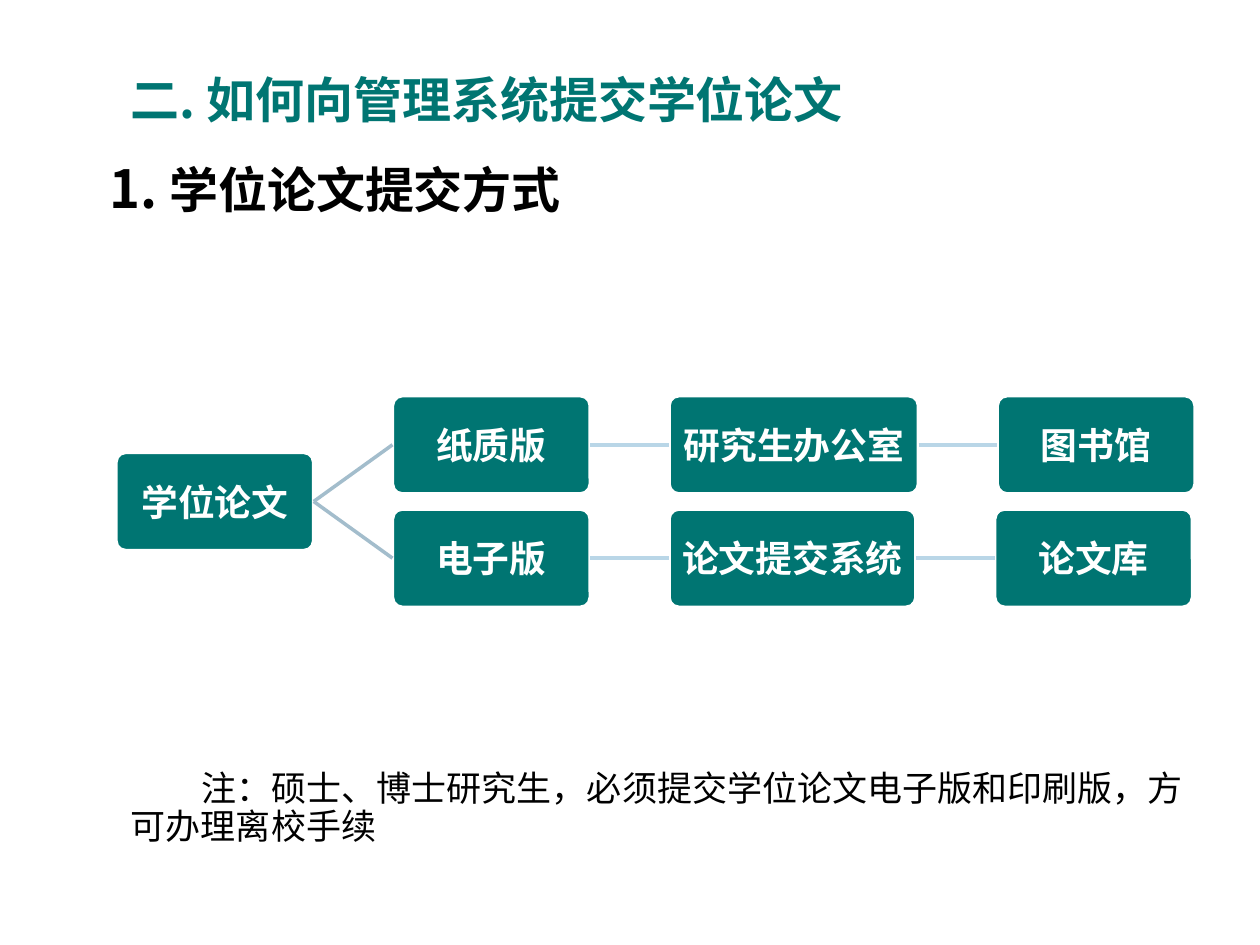
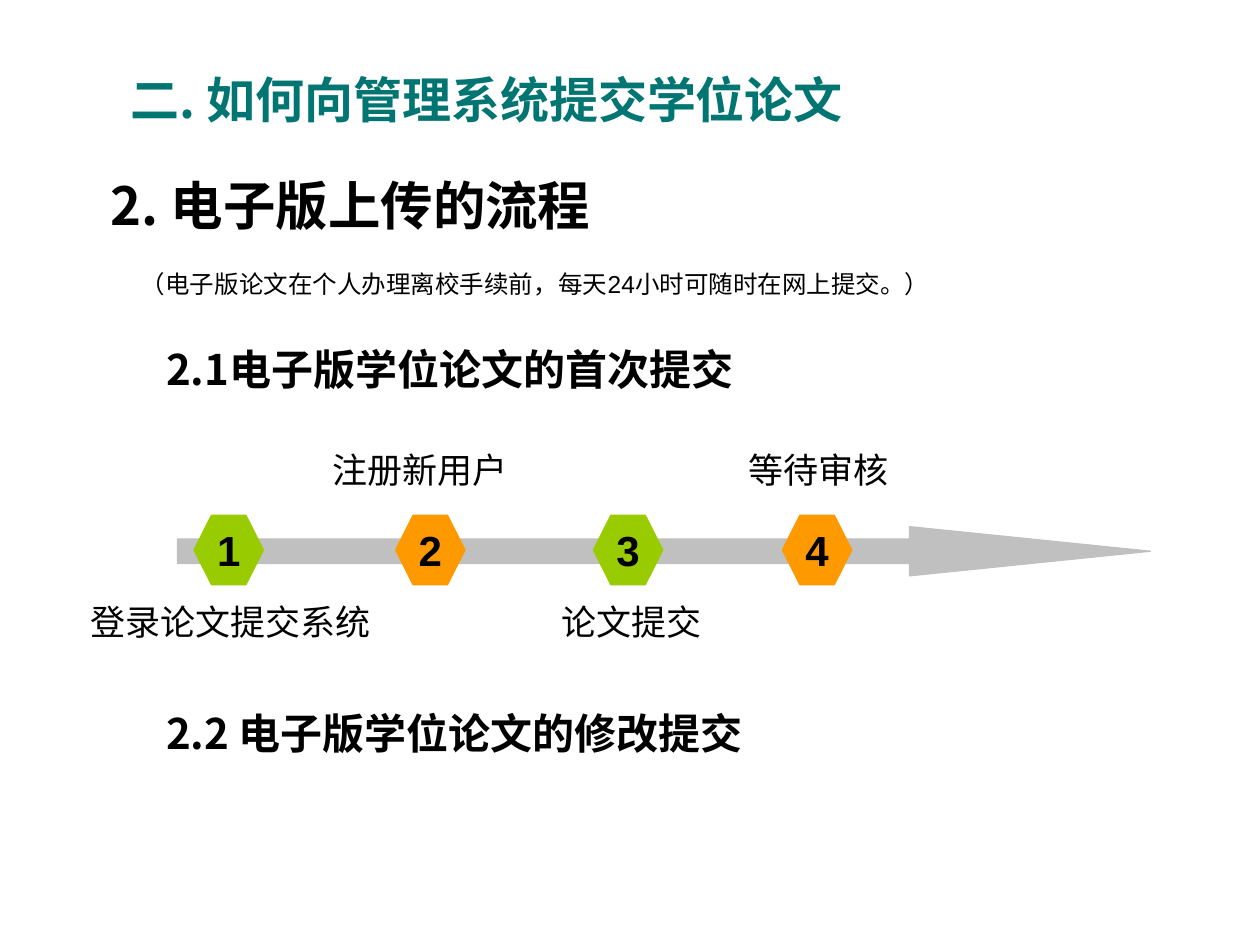
from lxml import etree
from pptx import Presentation
from pptx.dml.color import RGBColor
from pptx.enum.shapes import MSO_CONNECTOR, MSO_SHAPE
from pptx.enum.text import MSO_ANCHOR, PP_ALIGN
from pptx.oxml.ns import qn
from pptx.util import Inches, Pt

SLIDE_W, SLIDE_H = Inches(10), Inches(7.5)
UNIT = SLIDE_W // 10

TEAL = RGBColor(0x00, 0x75, 0x72)
WHITE = RGBColor(0xFF, 0xFF, 0xFF)
BLACK = RGBColor(0x00, 0x00, 0x00)
BRANCH = RGBColor(0xA3, 0xBD, 0xCC)
LINK = RGBColor(0xB9, 0xD6, 0xE7)
GRAY = RGBColor(0xC0, 0xC0, 0xC0)
GREEN = RGBColor(0x99, 0xCC, 0x00)
ORANGE = RGBColor(0xFF, 0x99, 0x00)

LATIN, CJK = "Arial", "Noto Sans CJK SC"
TOP, MIDDLE, BOTTOM = MSO_ANCHOR.TOP, MSO_ANCHOR.MIDDLE, MSO_ANCHOR.BOTTOM
CENTER = PP_ALIGN.CENTER
ROUNDED, HEXAGON, ARROW = MSO_SHAPE.ROUNDED_RECTANGLE, MSO_SHAPE.HEXAGON, MSO_SHAPE.RIGHT_ARROW
STRAIGHT = MSO_CONNECTOR.STRAIGHT
LEFT_SITE, RIGHT_SITE = 1, 3

NODE_W, NODE_H, NODE_GAP = 1.57, 0.78, 0.625
ROOT_LEFT, ROOT_TOP = 0.92, 3.59
HEX_TOP, HEX_SIZE = 4.09, 0.55
LABEL_ABOVE, LABEL_BELOW, LABEL_H = 3.51, 4.71, 0.44

ROUTES = [
    (3.14, 1.98, ["纸质版", "研究生办公室", "图书馆"]),
    (4.04, 1.96, ["电子版", "论文提交系统", "论文库"]),
]
STEPS = [
    (1.54, GREEN, "登录论文提交系统", 0.62, LABEL_BELOW, 2.6),
    (3.14, ORANGE, "注册新用户", 2.54, LABEL_ABOVE, 1.59),
    (4.71, GREEN, "论文提交", 4.36, LABEL_BELOW, 1.31),
    (6.21, ORANGE, "等待审核", 5.84, LABEL_ABOVE, 1.31),
]


def grid(*lengths):
    return [int(UNIT * n) for n in lengths]


def add_run(p, text, size, color=BLACK, font=LATIN, bold=False):
    r = p.add_run()
    r.text = text
    r.font.size = Pt(size)
    r.font.bold = bold
    r.font.color.rgb = color
    r.font.name = font
    etree.SubElement(r.font._element, qn("a:ea")).set("typeface", CJK)


def add_text(s, box, runs, anchor=MIDDLE, indent=0, first_indent=0, wrap=True):
    tf = s.shapes.add_textbox(*grid(*box)).text_frame
    tf.word_wrap = wrap
    tf.vertical_anchor = anchor
    p = tf.paragraphs[0]
    pPr = p._p.get_or_add_pPr()
    pPr.set("marL", str(grid(indent)[0]))
    pPr.set("indent", str(grid(first_indent)[0]))
    for run in runs:
        add_run(p, *run)
    return p


def add_title(s):
    add_text(s, (0.94, 0.16, 8.34, 1.25),
             [("二. 如何向管理系统提交学位论文", 28, TEAL, CJK, True)])


def add_heading(s, box, number, text, text_size):
    add_text(s, box, [(number, 30, BLACK, CJK, True),
                      (text, text_size, BLACK, CJK, True)], indent=0.27)


def add_subheading(s, top, text):
    add_text(s, (1.13, top, 8.74, 0.61), [(text, 24, BLACK, CJK, True)], indent=0.09)


def add_shape(s, kind, box, adjustments, fill, line, line_width):
    sp = s.shapes.add_shape(kind, *grid(*box))
    sp.shadow.inherit = False
    for i, value in enumerate(adjustments):
        sp.adjustments[i] = value
    sp.fill.solid()
    sp.fill.fore_color.rgb = fill
    sp.line.color.rgb = line
    sp.line.width = Pt(line_width)
    return sp


def fill_text(sp, text, size, color, inset):
    tf = sp.text_frame
    tf.word_wrap = False
    tf.vertical_anchor = MIDDLE
    tf.margin_left = tf.margin_right = tf.margin_top = tf.margin_bottom = Inches(inset)
    p = tf.paragraphs[0]
    p.alignment = CENTER
    add_run(p, text, size, color, LATIN, True)


def add_node(s, left, top, width, text):
    sp = add_shape(s, ROUNDED, (left, top, width, NODE_H), [0.1], TEAL, WHITE, 2)
    fill_text(sp, text, 21, WHITE, 0.01)
    return sp


def link_nodes(s, start, end, color):
    cxn = s.shapes.add_connector(STRAIGHT, 0, 0, 0, 0)
    cxn.begin_connect(start, RIGHT_SITE)
    cxn.end_connect(end, LEFT_SITE)
    cxn.line.color.rgb = color
    cxn.line.width = Pt(2)
    etree.SubElement(cxn._element.spPr, qn("a:effectLst"))


def add_route(s, root, top, office_width, names):
    previous, color = root, BRANCH
    left = ROOT_LEFT + NODE_W + NODE_GAP
    for name, width in zip(names, (NODE_W, office_width, NODE_W)):
        node = add_node(s, left, top, width, name)
        link_nodes(s, previous, node, color)
        previous, color = node, LINK
        left += width + NODE_GAP


def add_step(s, number, left, color, text, label_left, label_top, label_width):
    sp = add_shape(s, HEXAGON, (left, HEX_TOP, HEX_SIZE, HEX_SIZE), [0.251], color, color, 0.75)
    fill_text(sp, str(number), 24, BLACK, 0)
    add_text(s, (label_left, label_top, label_width, LABEL_H), [(text, 20)], wrap=False)


def build_submission_routes(s):
    add_title(s)
    add_heading(s, (0.5, 0.86, 9, 1.25), "1. ", "学位论文提交方式", 28)
    root = add_node(s, ROOT_LEFT, ROOT_TOP, NODE_W, "学位论文")
    for route in ROUTES:
        add_route(s, root, *route)
    note = add_text(s, (0.94, 5.76, 8.56, 1.01),
                    [("注：硕士、博士研究生，必须提交学位论文电子版和印刷版，方可办理离校手续", 20)],
                    anchor=BOTTOM, first_indent=0.56)
    note.line_spacing = Pt(21.7)


def build_upload_steps(s):
    add_title(s)
    add_heading(s, (0.51, 1.33, 8.74, 0.58), "2. ", "电子版上传的流程", 30)
    add_text(s, (0.51, 2, 8.74, 0.5),
             [("（电子版论文在个人办理离校手续前，每天24小时可随时在网上提交。）", 14)], indent=0.51)
    add_subheading(s, 2.62, "2.1电子版学位论文的首次提交")
    add_shape(s, ARROW, (1.41, 4.18, 7.72, 0.39), [0.5, 4.9], GRAY, GRAY, 0.75)
    for number, step in enumerate(STEPS, 1):
        add_step(s, number, *step)
    add_subheading(s, 5.51, "2.2 电子版学位论文的修改提交")


def main():
    prs = Presentation()
    prs.slide_width, prs.slide_height = SLIDE_W, SLIDE_H
    blank = prs.slide_layouts[6]
    for build in (build_submission_routes, build_upload_steps):
        build(prs.slides.add_slide(blank))
    prs.save("out.pptx")


if __name__ == "__main__":
    main()
